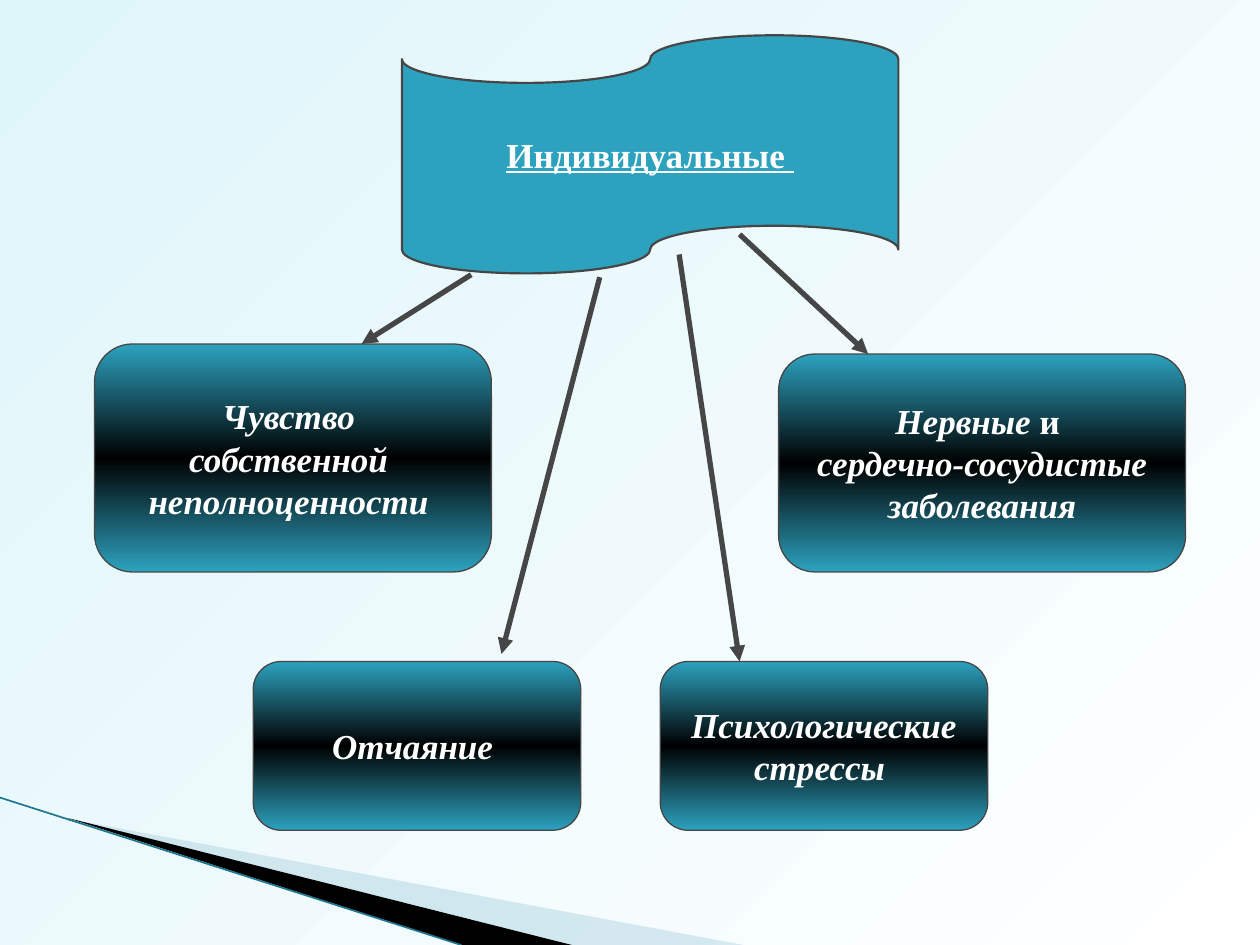
"""Build a slide of four individual causes branching from a banner."""
from copy import deepcopy
from dataclasses import dataclass

from lxml import etree
from pptx import Presentation
from pptx.dml.color import RGBColor
from pptx.enum.shapes import MSO_CONNECTOR, MSO_SHAPE
from pptx.enum.text import MSO_ANCHOR, PP_ALIGN
from pptx.oxml.ns import qn
from pptx.util import Inches, Pt

TAPE = MSO_SHAPE.FLOWCHART_PUNCHED_TAPE
ROUNDED = MSO_SHAPE.ROUNDED_RECTANGLE
STRAIGHT = MSO_CONNECTOR.STRAIGHT
CENTER = PP_ALIGN.CENTER
MIDDLE = MSO_ANCHOR.MIDDLE

TEAL = RGBColor(0x2D, 0xA2, 0xBF)
BLACK = RGBColor(0x00, 0x00, 0x00)
WHITE = RGBColor(0xFF, 0xFF, 0xFF)
GRAY = RGBColor(0x46, 0x46, 0x46)
PALE_CYAN = RGBColor(0xDE, 0xF5, 0xFA)
PALE_BLUE = RGBColor(0xA0, 0xCB, 0xDC)
EDGE_TEAL = RGBColor(0x1F, 0x76, 0x90)

FONT = "Times New Roman"
Point = tuple[float, float]


@dataclass(frozen=True)
class Cause:
    left: float
    top: float
    width: float
    height: float
    lines: tuple[str, ...]
    upright_ending: str = ""


@dataclass(frozen=True)
class Line:
    start: Point
    end: Point


@dataclass(frozen=True)
class Wedge:
    points: tuple[Point, ...]
    color: RGBColor
    opacity: int = 100


CAUSES = (
    Cause(0.75, 2.73, 3.15, 1.81, ("Чувство ", "собственной ", "неполноценности ")),
    Cause(2.01, 5.25, 2.6, 1.34, ("Отчаяние ",)),
    Cause(6.18, 2.81, 3.23, 1.73,
          ("Нервные ", "сердечно-сосудистые", "заболевания"), "и "),
    Cause(5.24, 5.25, 2.6, 1.34, ("Психологические", "стрессы ")),
)
ARROWS = (
    Line((3.74, 2.18), (2.87, 2.73)),
    Line((5.39, 2.02), (5.87, 5.25)),
    Line((4.76, 2.2), (3.98, 5.19)),
    Line((5.87, 1.86), (6.89, 2.81)),
)
WEDGES = (
    Wedge(((0.55, 6.5), (5.9, 7.5), (4.55, 7.5)), PALE_BLUE, 40),
    Wedge(((0.53, 6.49), (4.54, 7.5), (3.67, 7.5)), BLACK),
)
CORNER_EDGE = Line((0, 6.33), (3.66, 7.5))


def paint_background(slide) -> None:
    fill = slide.background.fill
    fill.gradient()
    fill.gradient_angle = 315
    for stop, color in zip(fill.gradient_stops, (PALE_CYAN, WHITE)):
        stop.color.rgb = color


def add_wedge(slide, wedge: Wedge) -> None:
    first, *rest = [(Inches(x), Inches(y)) for x, y in wedge.points]
    builder = slide.shapes.build_freeform(*first)
    builder.add_line_segments(rest)
    corner = builder.convert_to_shape()
    corner.shadow.inherit = False
    corner.line.fill.background()
    corner.fill.solid()
    corner.fill.fore_color.rgb = wedge.color
    if wedge.opacity < 100:
        color = corner._element.spPr.find(qn("a:solidFill"))[0]
        etree.SubElement(color, qn("a:alpha"), val=str(wedge.opacity * 1000))


def add_line(slide, line: Line, color: RGBColor, width: float, arrow: bool = False) -> None:
    connector = slide.shapes.add_connector(
        STRAIGHT, *map(Inches, line.start + line.end))
    connector.line.color.rgb = color
    connector.line.width = Pt(width)
    properties = connector._element.spPr
    if arrow:
        etree.SubElement(properties.find(qn("a:ln")), qn("a:tailEnd"), type="triangle")
    etree.SubElement(properties, qn("a:effectLst"))


def add_panel(slide, preset, box: tuple[float, ...], lines: tuple[str, ...], outline: float):
    panel = slide.shapes.add_shape(preset, *map(Inches, box))
    panel.shadow.inherit = False
    panel.line.color.rgb = GRAY
    panel.line.width = Pt(outline)
    frame = panel.text_frame
    frame.word_wrap = False
    frame.vertical_anchor = MIDDLE
    for index, text in enumerate(lines):
        paragraph = frame.paragraphs[0] if index == 0 else frame.add_paragraph()
        paragraph.alignment = CENTER
        paragraph.add_run().text = text
        font = paragraph.font
        font.name = FONT
        font.size = Pt(20)
        font.bold = True
        font.color.rgb = WHITE
    return panel


def add_banner(slide) -> None:
    banner = add_panel(slide, TAPE, (3.19, 0.28, 3.94, 1.89), ("Индивидуальные ",), 1.25)
    banner.fill.solid()
    banner.fill.fore_color.rgb = TEAL
    banner.text_frame.paragraphs[0].font.underline = True


def add_cause(slide, cause: Cause) -> None:
    box = (cause.left, cause.top, cause.width, cause.height)
    panel = add_panel(slide, ROUNDED, box, cause.lines, 0.75)
    fill = panel.fill
    fill.gradient()
    fill.gradient_angle = 270
    stops = panel._element.spPr.find(qn("a:gradFill")).find(qn("a:gsLst"))
    stops.append(deepcopy(stops[-1]))
    for stop, position, color in zip(fill.gradient_stops, (0, 0.5, 1), (TEAL, BLACK, TEAL)):
        stop.position = position
        stop.color.rgb = color
    paragraphs = panel.text_frame.paragraphs
    if cause.upright_ending:
        paragraphs[0].runs[0].font.italic = True
        ending = paragraphs[0].add_run()
        ending.text = cause.upright_ending
        ending.font.italic = False
        paragraphs = paragraphs[1:]
    for paragraph in paragraphs:
        paragraph.font.italic = True


def main() -> None:
    presentation = Presentation()
    presentation.slide_width = Inches(10)
    presentation.slide_height = Inches(7.5)
    slide = presentation.slides.add_slide(presentation.slide_layouts[6])
    paint_background(slide)
    for wedge in WEDGES:
        add_wedge(slide, wedge)
    add_line(slide, CORNER_EDGE, EDGE_TEAL, 0.95)
    add_banner(slide)
    for cause in CAUSES:
        add_cause(slide, cause)
    for arrow in ARROWS:
        add_line(slide, arrow, GRAY, 3, arrow=True)
    presentation.save("out.pptx")


if __name__ == "__main__":
    main()
